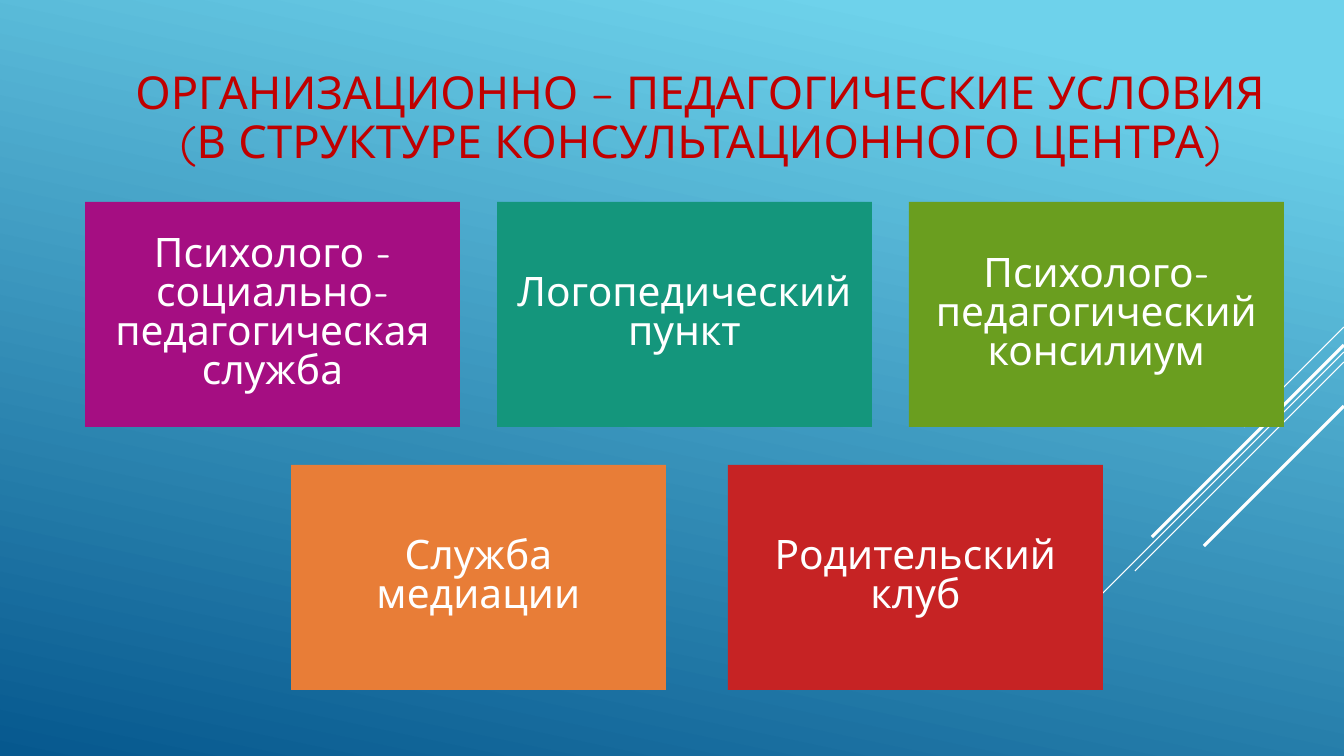
from lxml.etree import SubElement
from pptx import Presentation
from pptx.dml.color import RGBColor
from pptx.enum.shapes import MSO_CONNECTOR, MSO_SHAPE
from pptx.enum.text import MSO_ANCHOR, PP_ALIGN
from pptx.oxml.ns import qn
from pptx.util import Emu, Pt

FONT = "Quicksand"
CARD_WIDTH, CARD_HEIGHT = 375, 225


def px(length):
    """Turn whole pixels into EMU at 100.8 pixels to the inch."""
    return Emu(round(length * 914400 / 100.8))


def color(value):
    """Turn a hex string into a colour."""
    return RGBColor.from_string(value)


def write_text(shape, text, *, size, text_color, line_spacing, margins=(10, 5)):
    """Write centred text into a shape."""
    frame = shape.text_frame
    frame.word_wrap = True
    frame.vertical_anchor = MSO_ANCHOR.MIDDLE
    frame.margin_left = frame.margin_right = px(margins[0])
    frame.margin_top = frame.margin_bottom = px(margins[1])
    frame.text = text
    paragraph = frame.paragraphs[0]
    paragraph.alignment = PP_ALIGN.CENTER
    paragraph.line_spacing = line_spacing
    for run in paragraph.runs:
        run.font.name = FONT
        run.font.size = Pt(size)
        run.font.color.rgb = color(text_color)


def paint_background(slide):
    """Fill the slide with the blue gradient."""
    fill = slide.background.fill
    fill.gradient()
    fill.gradient_angle = 258
    stops = ((0.1, "6ED2EB"), (1, "06588E"))
    for stop, (position, value) in zip(fill.gradient_stops, stops):
        stop.position = position
        stop.color.rgb = color(value)


def draw_diagonals(slide, right, top):
    """Draw the white diagonals that fall leftwards from the right edge."""
    diagonals = ((0, 100, 0.75), (25, 329, 0.75), (35, 209, 0.75),
                 (18, 192, 2.25), (79, 140, 2.25))
    for offset, reach, width in diagonals:
        start = top + offset
        connector = slide.shapes.add_connector(
            MSO_CONNECTOR.STRAIGHT, px(right), px(start),
            px(right - reach), px(start + reach))
        connector.line.color.rgb = color("FFFFFF")
        connector.line.width = Pt(width)
        SubElement(connector._element.spPr, qn("a:effectLst"))


def add_title(slide, left, top, width, height):
    """Place the title in its box."""
    title = slide.shapes.add_textbox(px(left), px(top), px(width), px(height))
    write_text(title, "ОРГАНИЗАЦИОННО – ПЕДАГОГИЧЕСКИЕ УСЛОВИЯ\v"
               "(В СТРУКТУРЕ КОНСУЛЬТАЦИОННОГО ЦЕНТРА)",
               size=32.4, text_color="C00000", line_spacing=0.9)


def add_card_row(slide, left, top, step, cards):
    """Place a row of coloured cards at equal steps."""
    for index, (text, fill_color) in enumerate(cards):
        card = slide.shapes.add_shape(
            MSO_SHAPE.RECTANGLE, px(left + index * step), px(top),
            px(CARD_WIDTH), px(CARD_HEIGHT))
        card.shadow.inherit = False
        card.fill.solid()
        card.fill.fore_color.rgb = color(fill_color)
        card.line.fill.background()
        write_text(card, text, size=29, text_color="FFFFFF",
                   line_spacing=0.8, margins=(12, 12))


def main():
    """Build the slide and save it."""
    presentation = Presentation()
    presentation.slide_width, presentation.slide_height = px(1344), px(756)
    slide = presentation.slides.add_slide(presentation.slide_layouts[6])
    paint_background(slide)
    draw_diagonals(slide, 1344, 327)
    add_title(slide, 93, 36, 1215, 166)
    add_card_row(slide, 85, 202, 412, (
        ("Психолого - социально-педагогическая служба", "A50E82"),
        ("Логопедический пункт", "14967C"),
        ("Психолого-педагогический консилиум", "6A9E1F")))
    add_card_row(slide, 291, 465, 437, (
        ("Служба медиации", "E87D37"),
        ("Родительский клуб", "C62324")))
    presentation.save("out.pptx")


if __name__ == "__main__":
    main()
